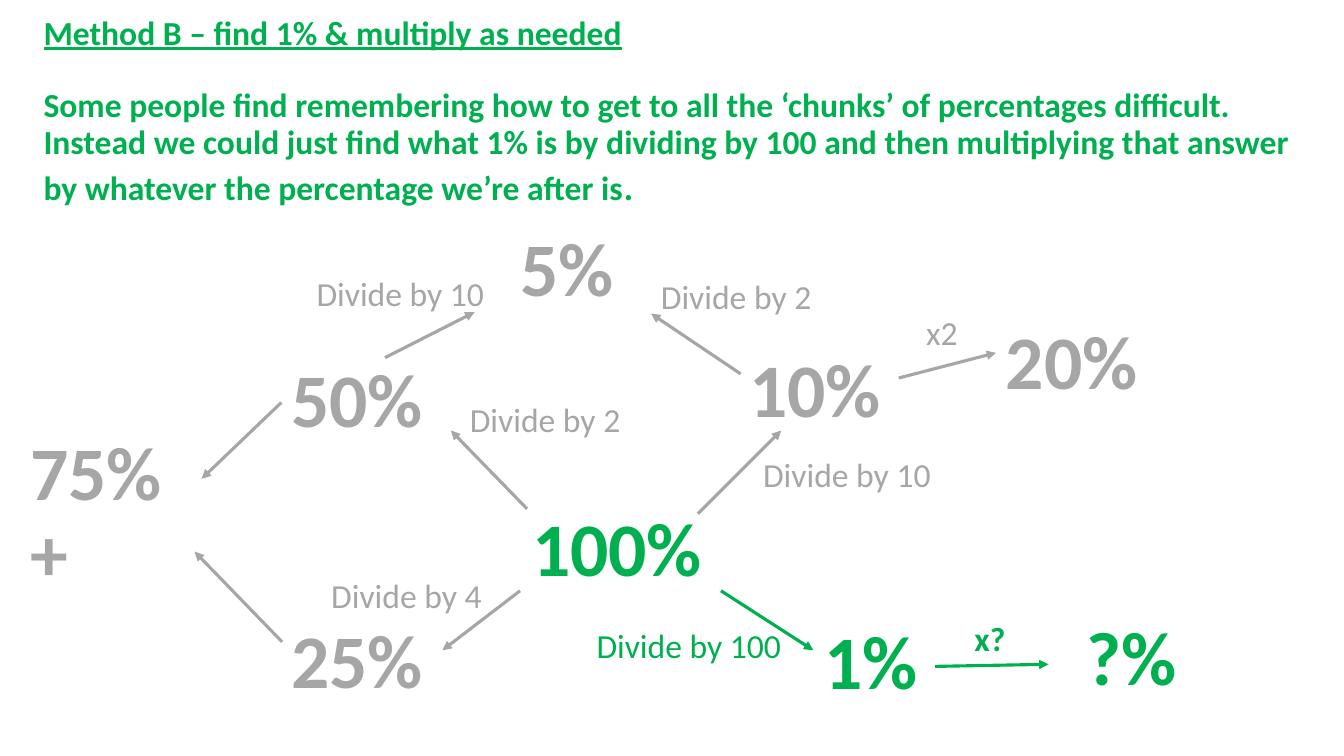
from lxml.etree import SubElement
from pptx import Presentation
from pptx.dml.color import RGBColor
from pptx.enum.shapes import MSO_CONNECTOR as Connector
from pptx.enum.text import MSO_ANCHOR as Anchor
from pptx.oxml.ns import qn
from pptx.util import Pt

GREEN = RGBColor(0x00, 0xB0, 0x50)
GREY = RGBColor(0xA6, 0xA6, 0xA6)
FONT = "Calibri"

HEADING = "Method B – find 1% & multiply as needed"
EXPLANATION = [
    "Some people find remembering how to get to all the ‘chunks’ of percentages difficult.",
    "Instead we could just find what 1% is by dividing by 100 and then multiplying "
    "that answer by whatever the percentage we’re after is",
]

# text, left, top, width, height, colour
PERCENTAGES = [
    ("100%", 373, 342, 171, 104, GREEN),
    ("50%", 201, 235.5, 122, 104, GREY),
    ("25%", 201, 422, 122, 104, GREY),
    ("10%", 528, 229, 122, 104, GREY),
    ("1%", 582, 423, 122, 104, GREEN),
    ("75%\n+", 14.5, 317, 171, 104, GREY),
    ("5%", 364.5, 156, 90, 77, GREY),
    ("20%", 711.5, 209, 122, 104, GREY),
    ("?%", 769, 431, 91.5, 82, GREEN),
]

# text, left, top, width, colour, bold
OPERATIONS = [
    ("Divide by 10", 538, 321, 156, GREY, False),
    ("Divide by 100", 419, 443, 156, GREEN, False),
    ("Divide by 2", 328.5, 281.5, 156, GREY, False),
    ("Divide by 4", 229.5, 407, 156, GREY, False),
    ("Divide by 10", 219, 191.5, 156, GREY, False),
    ("Divide by 2", 465, 193.5, 156, GREY, False),
    ("x2", 654.5, 219, 50, GREY, False),
    ("x?", 689, 438, 50, GREEN, True),
]

# start x, start y, end x, end y, colour
ARROWS = [
    (498.5, 367, 558, 307.5, GREY),
    (515, 422, 581, 464.5, GREEN),
    (376.5, 363.5, 322, 307.5, GREY),
    (371.5, 422, 316, 464.5, GREY),
    (201, 287.5, 144, 342, GREY),
    (201.5, 458.5, 139, 394, GREY),
    (529, 267, 465, 224, GREY),
    (275, 255.5, 339, 223, GREY),
    (642, 270, 711.5, 252, GREY),
    (668, 476, 749, 474.5, GREEN),
]


def add_run(paragraph, text, size, colour, bold=False, underline=False):
    run = paragraph.add_run()
    run.text = text
    font = run.font
    font.name, font.size = FONT, Pt(size)
    font.bold, font.underline = bold, underline
    font.color.rgb = colour


def add_text(slide, text, left, top, width, height, anchor=Anchor.TOP,
             spacing=1.0, **run_format):
    """Add a text box with one paragraph per line of text; return its paragraphs."""
    frame = slide.shapes.add_textbox(Pt(left), Pt(top), Pt(width), Pt(height)).text_frame
    frame.word_wrap = True
    frame.vertical_anchor = anchor
    for index, line in enumerate(text.split("\n")):
        paragraph = frame.add_paragraph() if index else frame.paragraphs[0]
        paragraph.line_spacing = spacing
        add_run(paragraph, line, **run_format)
    return frame.paragraphs


def add_introduction(slide):
    heading, *explanation = add_text(
        slide, "\n".join([HEADING, *EXPLANATION]), 24, 12, 921, 137.5,
        anchor=Anchor.MIDDLE, spacing=0.9, size=24, colour=GREEN, bold=True)
    heading.runs[0].font.underline = True
    heading.space_after = Pt(26)
    add_run(explanation[-1], ".", size=32, colour=GREEN)


def add_arrow(slide, start_x, start_y, end_x, end_y, colour):
    arrow = slide.shapes.add_connector(
        Connector.STRAIGHT, Pt(start_x), Pt(start_y), Pt(end_x), Pt(end_y))
    arrow.line.color.rgb = colour
    arrow.line.width = Pt(2.25)
    SubElement(arrow.line._get_or_add_ln(), qn("a:tailEnd"), type="triangle")
    SubElement(arrow._element.spPr, qn("a:effectLst"))


def main():
    deck = Presentation()
    deck.slide_width, deck.slide_height = Pt(960), Pt(540)
    slide = deck.slides.add_slide(deck.slide_layouts[6])

    add_introduction(slide)
    for text, left, top, width, height, colour in PERCENTAGES:
        add_text(slide, text, left, top, width, height, anchor=Anchor.MIDDLE,
                 spacing=0.9, size=54, colour=colour, bold=True)
    for arrow in ARROWS:
        add_arrow(slide, *arrow)
    for text, left, top, width, colour, bold in OPERATIONS:
        add_text(slide, text, left, top, width, 36, size=24, colour=colour, bold=bold)

    deck.save("out.pptx")


if __name__ == "__main__":
    main()
